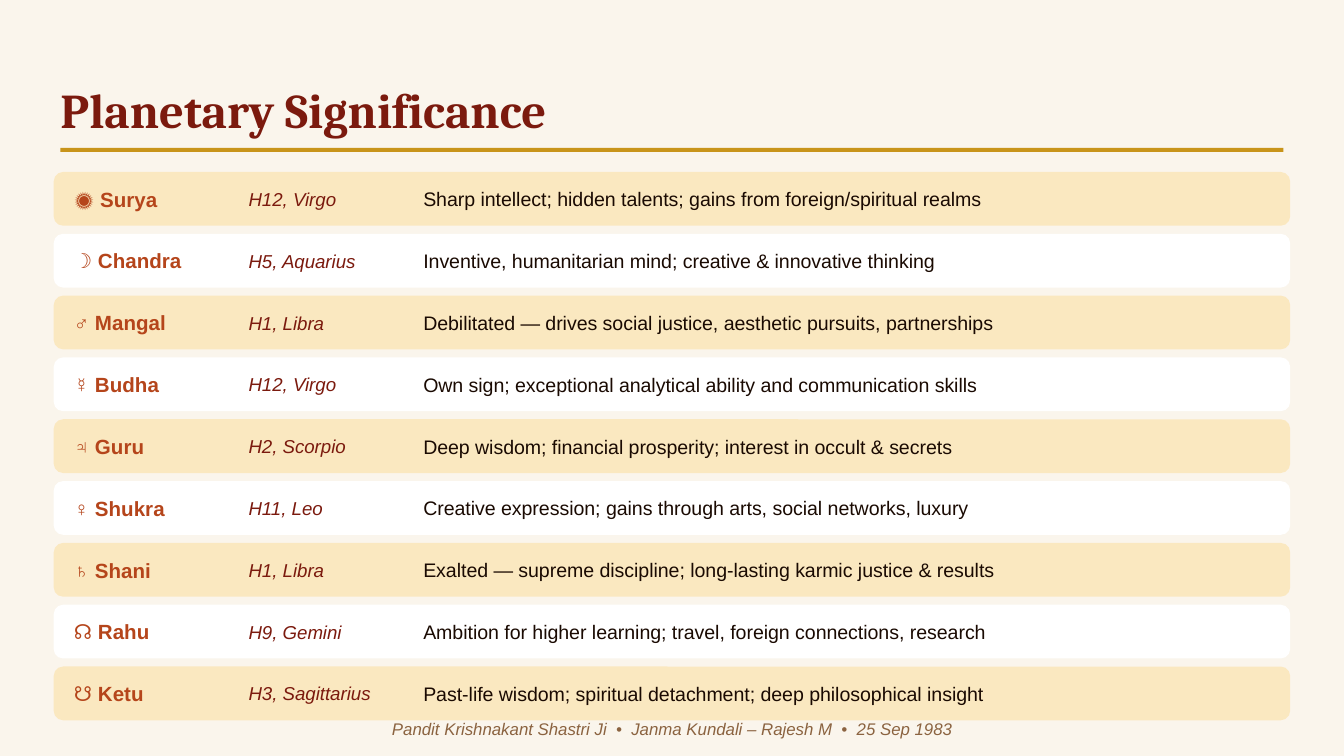
from pptx import Presentation
from pptx.dml.color import RGBColor
from pptx.enum.shapes import MSO_SHAPE
from pptx.enum.text import MSO_ANCHOR, MSO_AUTO_SIZE, PP_ALIGN
from pptx.util import Pt

PX = 4572  # EMU per px, 200 px to the inch
WIDTH, HEIGHT = 2000, 1125

CREAM = RGBColor(0xFA, 0xF5, 0xEC)
MAROON = RGBColor(0x7B, 0x1A, 0x0E)
GOLD = RGBColor(0xC8, 0x94, 0x1A)
SAND = RGBColor(0xFA, 0xE8, 0xC0)
WHITE = RGBColor(0xFF, 0xFF, 0xFF)
RUST = RGBColor(0xB5, 0x45, 0x1B)
INK = RGBColor(0x1A, 0x0A, 0x02)
BROWN = RGBColor(0x8B, 0x63, 0x40)

PLANETS = [
    ("☀ Surya", "H12, Virgo", "Sharp intellect; hidden talents; gains from foreign/spiritual realms"),
    ("☽ Chandra", "H5, Aquarius", "Inventive, humanitarian mind; creative & innovative thinking"),
    ("♂ Mangal", "H1, Libra", "Debilitated — drives social justice, aesthetic pursuits, partnerships"),
    ("☿ Budha", "H12, Virgo", "Own sign; exceptional analytical ability and communication skills"),
    ("♃ Guru", "H2, Scorpio", "Deep wisdom; financial prosperity; interest in occult & secrets"),
    ("♀ Shukra", "H11, Leo", "Creative expression; gains through arts, social networks, luxury"),
    ("♄ Shani", "H1, Libra", "Exalted — supreme discipline; long-lasting karmic justice & results"),
    ("☊ Rahu", "H9, Gemini", "Ambition for higher learning; travel, foreign connections, research"),
    ("☋ Ketu", "H3, Sagittarius", "Past-life wisdom; spiritual detachment; deep philosophical insight"),
]

# Left offset in the row, width and text format of each column
COLUMNS = [
    (30, 260, dict(size=11, color=RUST, bold=True)),
    (290, 260, dict(size=10, color=MAROON, italic=True)),
    (550, 1260, dict(size=10.5, color=INK)),
]


def emu(*lengths):
    return [n * PX for n in lengths]


def write(sp, text, size, color, font="Arial", bold=False, italic=False,
          align=PP_ALIGN.LEFT):
    tf = sp.text_frame
    tf.word_wrap = True
    tf.auto_size = MSO_AUTO_SIZE.NONE
    tf.vertical_anchor = MSO_ANCHOR.MIDDLE
    tf.margin_left = tf.margin_right = tf.margin_top = tf.margin_bottom = 0
    p = tf.paragraphs[0]
    p.alignment = align
    r = p.add_run()
    r.text = text
    r.font.name, r.font.size = font, Pt(size)
    r.font.bold, r.font.italic = bold, italic
    r.font.color.rgb = color


def add_text(s, x, y, w, h, text, **fmt):
    write(s.shapes.add_textbox(*emu(x, y, w, h)), text, **fmt)


def add_box(s, kind, x, y, w, h, fill):
    sp = s.shapes.add_shape(kind, *emu(x, y, w, h))
    sp.shadow.inherit = False
    sp.fill.solid()
    sp.fill.fore_color.rgb = fill
    sp.line.fill.background()
    return sp


def add_heading(s, x, y, w, h, text):
    """Fill the title placeholder and underline it with a gold rule."""
    title = s.shapes.title
    title.left, title.top, title.width, title.height = emu(x, y, w, h)
    write(title, text, size=26, color=MAROON, font="Cambria", bold=True)
    add_box(s, MSO_SHAPE.RECTANGLE, x, y + h + 6, w, 6, GOLD)


def add_planet_row(s, x, y, w, h, planet, fill):
    card = add_box(s, MSO_SHAPE.ROUNDED_RECTANGLE, x, y, w, h, fill)
    card.adjustments[0] = 0.175
    for text, (dx, width, fmt) in zip(planet, COLUMNS):
        add_text(s, x + dx, y + 12, width, h - 24, text, **fmt)


def add_planet_rows(s, x, y, w, h, gap):
    """Stack one row of height h per planet, with alternating fills."""
    for i, planet in enumerate(PLANETS):
        fill = WHITE if i % 2 else SAND
        add_planet_row(s, x, y + i * (h + gap), w, h, planet, fill)


def main():
    prs = Presentation()
    prs.slide_width, prs.slide_height = emu(WIDTH, HEIGHT)
    s = prs.slides.add_slide(prs.slide_layouts[5])
    s.background.fill.solid()
    s.background.fill.fore_color.rgb = CREAM
    add_heading(s, 90, 110, 1820, 104, "Planetary Significance")
    add_text(s, 0, 1057, WIDTH, 56,
             "Pandit Krishnakant Shastri Ji  •  Janma Kundali – Rajesh M  •  25 Sep 1983",
             size=9, color=BROWN, italic=True, align=PP_ALIGN.CENTER)
    add_planet_rows(s, 80, 256, 1840, 80, gap=12)
    prs.save("out.pptx")


if __name__ == "__main__":
    main()
